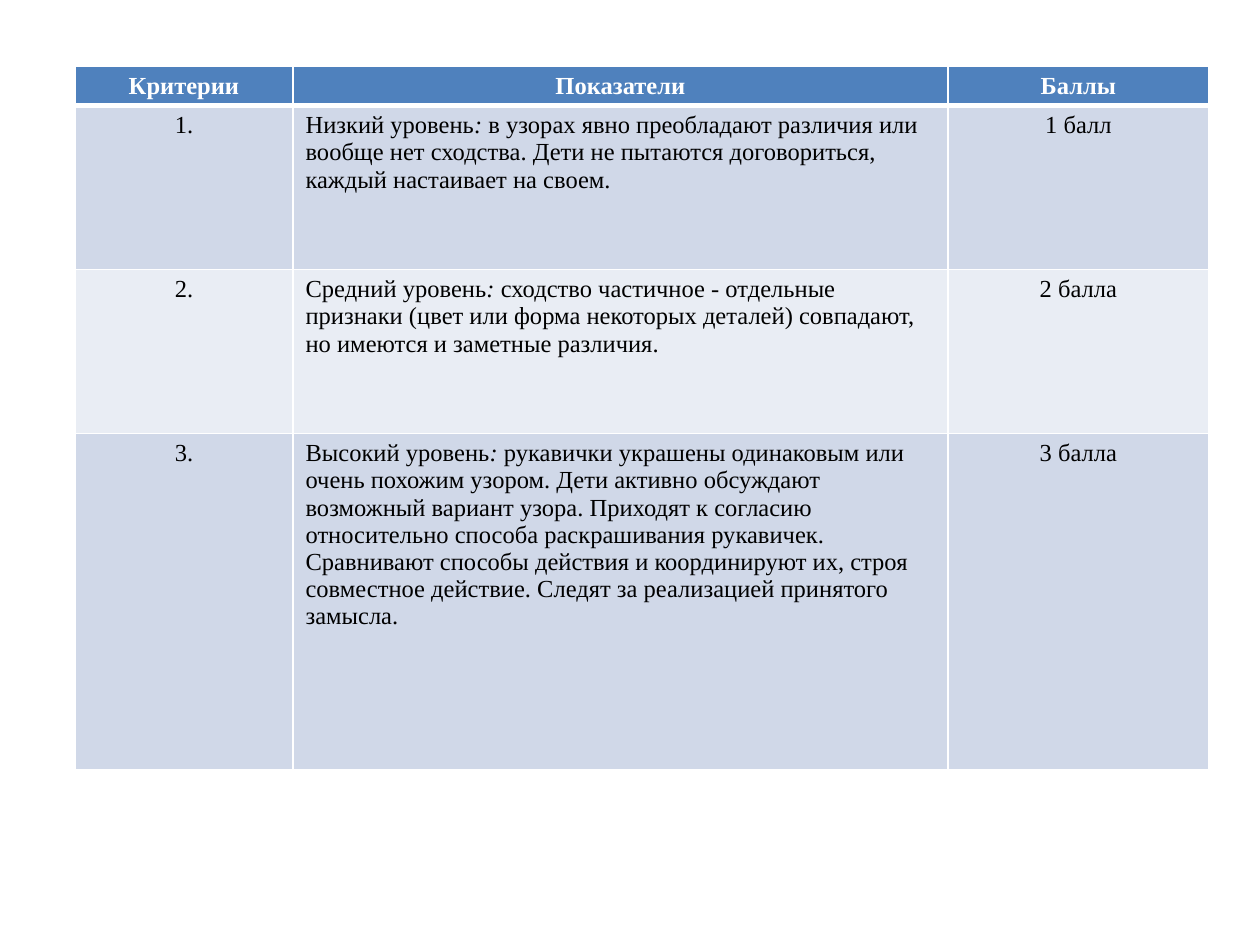
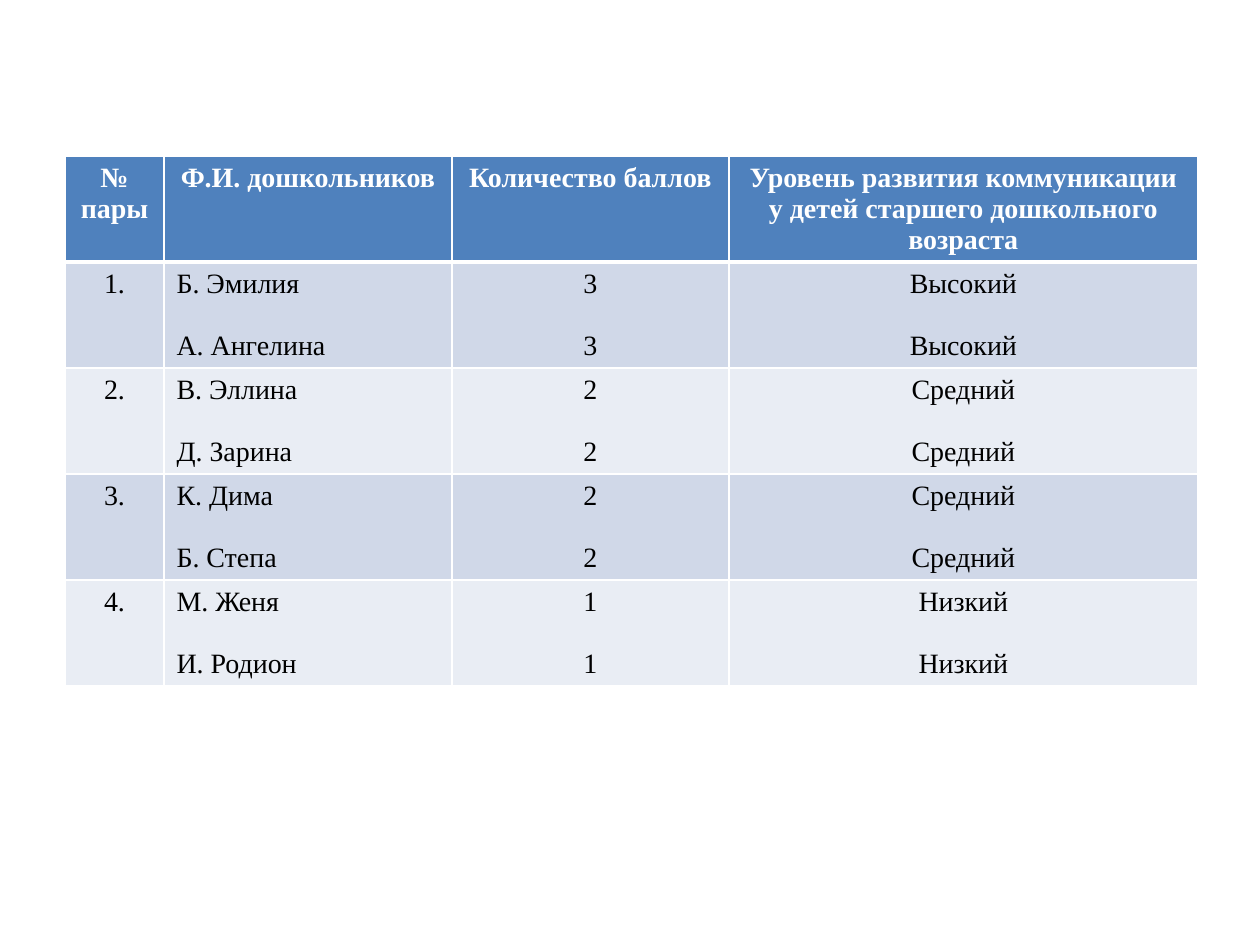
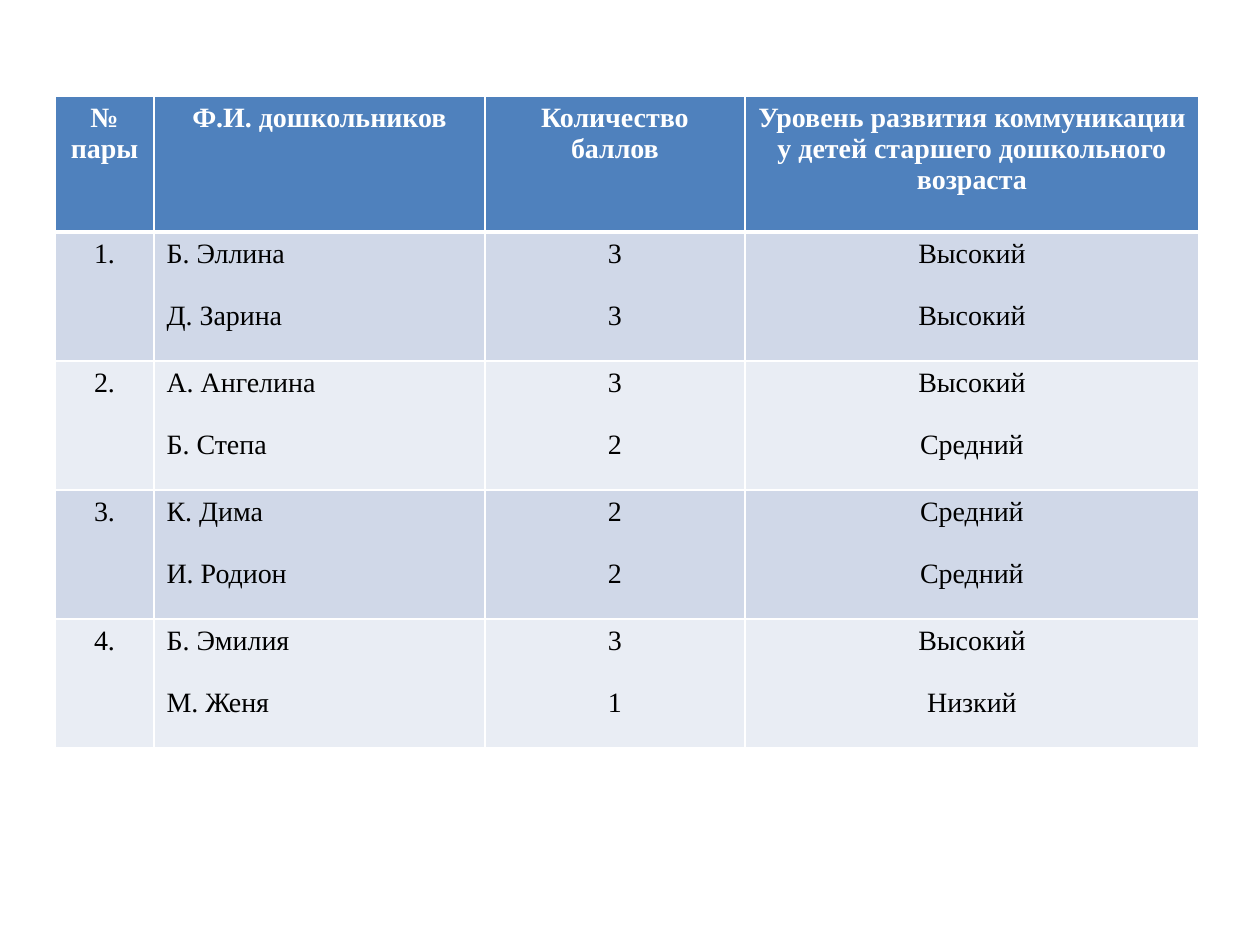
from dataclasses import dataclass

from lxml import etree
from pptx import Presentation, util as u
from pptx.dml.color import RGBColor
from pptx.enum import text
from pptx.oxml import ns

PX_PER_INCH = 126
CENTER, LEFT = text.PP_ALIGN.CENTER, text.PP_ALIGN.LEFT


@dataclass(frozen=True)
class Theme:
    font: str = "Times New Roman"
    header_fill: str = "4F81BD"
    bands: tuple = ("D0D8E8", "E9EDF4")
    header_text: str = "FFFFFF"
    body_text: str = "000000"
    border: str = "FFFFFF"
    thin: int = 1
    thick: int = 3
    criteria_size: int = 14
    result_size: int = 16
    pair_gap: float = 17.7


def px(length):
    return u.Emu(round(length * u.Inches(1) / PX_PER_INCH))


def write_text(frame, paragraphs, *, font, size, color, bold=False, align=LEFT, gap=0):
    """Each paragraph is a sequence of (text, italic) spans."""
    for index, spans in enumerate(paragraphs):
        para = frame.add_paragraph() if index else frame.paragraphs[0]
        para.alignment = align
        if index:
            para.space_before = u.Pt(gap)
        for content, italic in spans:
            span = para.add_run()
            span.text = content
            span.font.name = font
            span.font.size = u.Pt(size)
            span.font.bold = bold
            span.font.italic = italic
            span.font.color.rgb = RGBColor.from_string(color)


def set_borders(cell, color, widths):
    """Widths are points for the left, right, top and bottom edges."""
    properties = cell._tc.get_or_add_tcPr()
    for edge, width in zip(("lnL", "lnR", "lnT", "lnB"), widths):
        line = etree.SubElement(properties, ns.qn(f"a:{edge}"), w=str(u.Pt(width)))
        fill = etree.SubElement(line, ns.qn("a:solidFill"))
        etree.SubElement(fill, ns.qn("a:srgbClr"), val=color)


class Deck:
    def __init__(self, theme):
        self.theme = theme
        self.deck = Presentation()
        self.deck.slide_width, self.deck.slide_height = px(1260), px(945)
        self.page = None

    def add_page(self):
        self.page = self.deck.slides.add_slide(self.deck.slide_layouts[6])

    def add_table(self, left, top, columns, heights, rows, size):
        """The first row is the header; the second column is left-aligned below it."""
        table = self.page.shapes.add_table(
            len(rows), len(columns), px(left), px(top), px(sum(columns)), px(sum(heights))
        ).table
        table.horz_banding = False
        for column, width in zip(table.columns, columns):
            column.width = px(width)
        for row, height in zip(table.rows, heights):
            row.height = px(height)
        for row_index, row in enumerate(rows):
            for column_index, content in enumerate(row):
                self.fill_cell(table.cell(row_index, column_index), content,
                               row_index, column_index, size)

    def fill_cell(self, cell, content, row, column, size):
        theme = self.theme
        header = row == 0
        set_borders(cell, theme.border, (
            theme.thin, theme.thin,
            theme.thick if row == 1 else theme.thin,
            theme.thick if header else theme.thin,
        ))
        cell.fill.solid()
        cell.fill.fore_color.rgb = RGBColor.from_string(
            theme.header_fill if header else theme.bands[(row - 1) % 2])
        write_text(
            cell.text_frame,
            [[(line, False)] for line in content.split("\n")]
            if isinstance(content, str) else content,
            font=theme.font, size=size, bold=header, gap=theme.pair_gap,
            color=theme.header_text if header else theme.body_text,
            align=LEFT if column == 1 and not header else CENTER,
        )

    def save(self):
        self.deck.save("out.pptx")


def indicator(level, description):
    return [[(level, False), (":", True), (f" {description}", False)]]


def result_rows(pairs):
    """Each pair holds two children, each a (name, score) tuple."""
    levels = {1: "Низкий", 2: "Средний", 3: "Высокий"}
    rows = [RESULT_HEADER]
    for number, pair in enumerate(pairs, 1):
        rows.append((
            f"{number}.",
            "\n".join(name for name, score in pair),
            "\n".join(str(score) for name, score in pair),
            "\n".join(levels[score] for name, score in pair),
        ))
    return rows


CRITERIA = [
    ("Критерии", "Показатели", "Баллы"),
    ("1.", indicator(
        "Низкий уровень",
        "в узорах явно преобладают различия или вообще нет сходства. "
        "Дети не пытаются договориться, каждый настаивает на своем."), "1 балл"),
    ("2.", indicator(
        "Средний уровень",
        "сходство частичное - отдельные признаки (цвет или форма некоторых деталей) "
        "совпадают, но имеются и заметные различия."), "2 балла"),
    ("3.", indicator(
        "Высокий уровень",
        "рукавички украшены одинаковым или очень похожим узором. Дети активно обсуждают "
        "возможный вариант узора. Приходят к согласию относительно способа раскрашивания "
        "рукавичек. Сравнивают способы действия и координируют их, строя совместное "
        "действие. Следят за реализацией принятого замысла."), "3 балла"),
]

RESULT_HEADER = (
    "№ пары", "Ф.И. дошкольников", "Количество баллов",
    "Уровень развития коммуникации у детей старшего дошкольного возраста",
)

FIRST_PAIRS = [
    (("Б. Эмилия", 3), ("А. Ангелина", 3)),
    (("В. Эллина", 2), ("Д. Зарина", 2)),
    (("К. Дима", 2), ("Б. Степа", 2)),
    (("М. Женя", 1), ("И. Родион", 1)),
]

SECOND_PAIRS = [
    (("Б. Эллина", 3), ("Д. Зарина", 3)),
    (("А. Ангелина", 3), ("Б. Степа", 2)),
    (("К. Дима", 2), ("И. Родион", 2)),
    (("Б. Эмилия", 3), ("М. Женя", 1)),
]


def main():
    theme = Theme()
    deck = Deck(theme)

    deck.add_page()
    deck.add_table(75, 66, (218, 655, 261), (39, 164, 164, 336),
                   CRITERIA, theme.criteria_size)

    deck.add_page()
    deck.add_table(65, 156, (99, 288, 277, 469), [106] * 5,
                   result_rows(FIRST_PAIRS), theme.result_size)

    deck.add_page()
    deck.add_table(55, 96, (99, 331, 260, 454), [136] + [129] * 4,
                   result_rows(SECOND_PAIRS), theme.result_size)

    deck.save()


if __name__ == "__main__":
    main()
